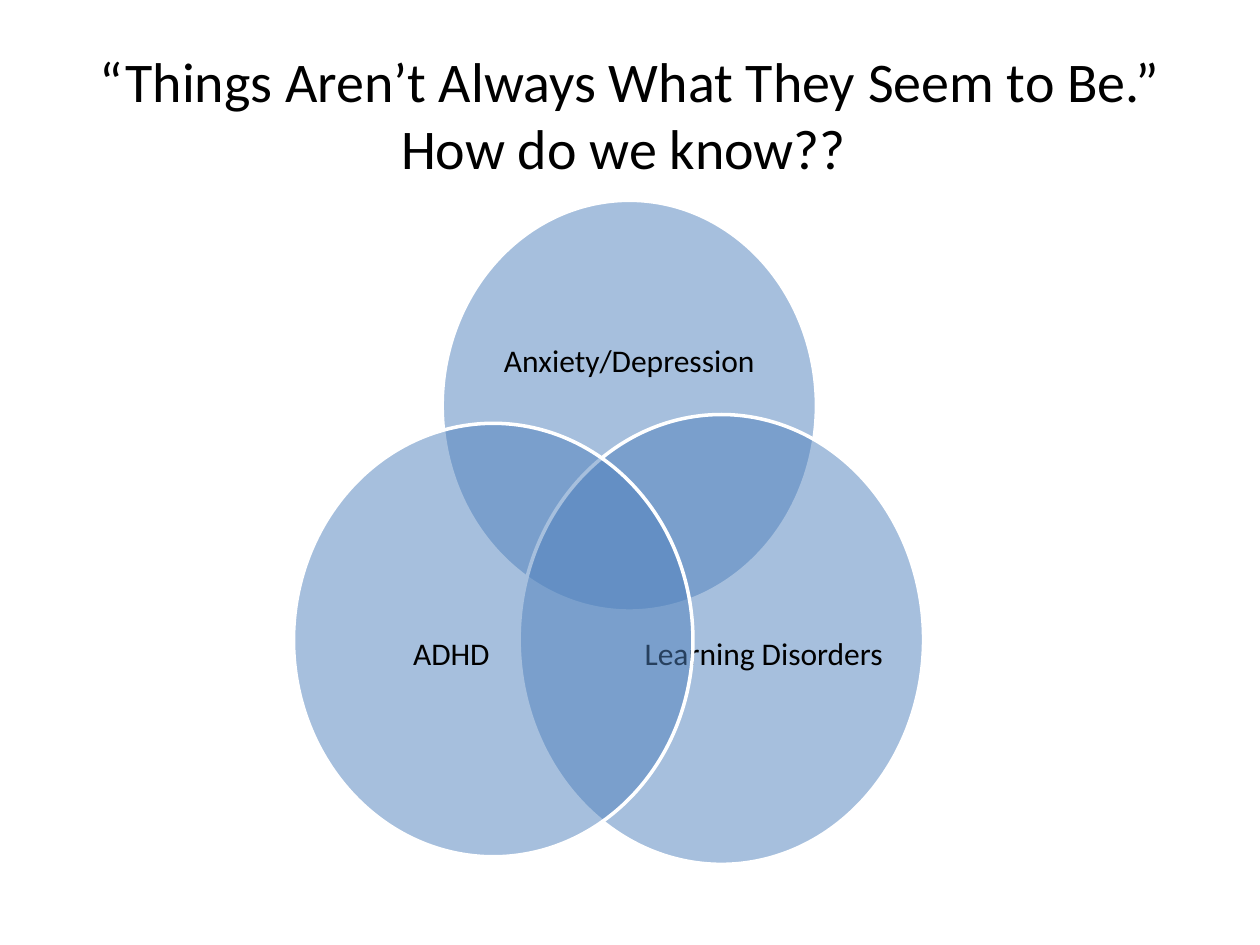
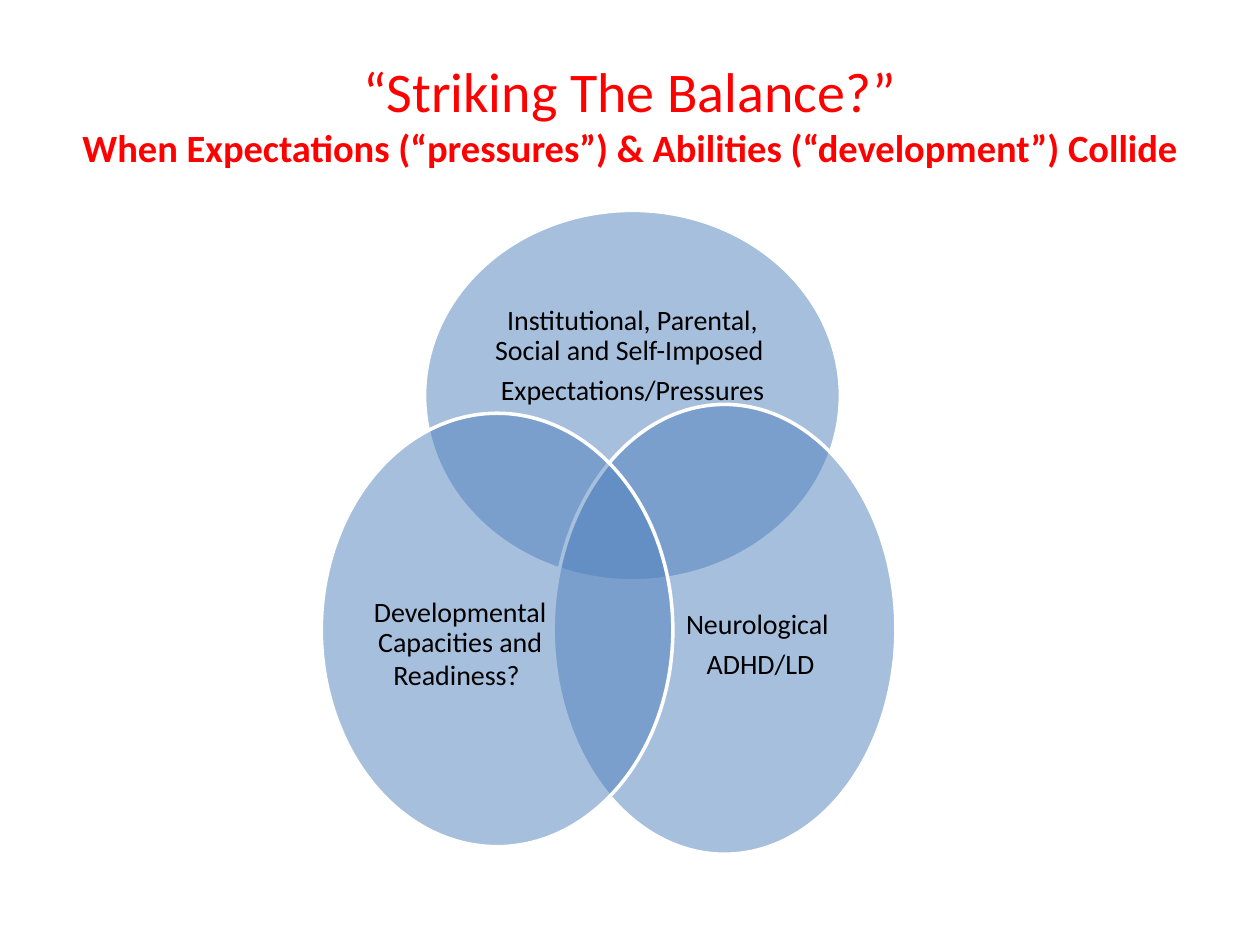
from lxml import etree
from pptx import Presentation
from pptx.dml.color import RGBColor
from pptx.enum.shapes import MSO_SHAPE
from pptx.enum.text import MSO_ANCHOR, MSO_AUTO_SIZE, PP_ALIGN
from pptx.oxml.ns import qn
from pptx.util import Inches, Pt

OVAL = MSO_SHAPE.OVAL
MIDDLE = MSO_ANCHOR.MIDDLE
NO_AUTOFIT = MSO_AUTO_SIZE.NONE
CENTER = PP_ALIGN.CENTER
TITLE_ONLY = 5

COLORS = {"circle": "4F81BD", "outline": "FFFFFF", "text": "000000", "alert": "FF0000"}
FONT = "Calibri"
COLUMNS, ROWS = 100, 75

# Label areas as shares of their circle: left, top, width, height
LABEL_AREAS = {
    "top": (0.13, 0.17, 0.74, 0.45),
    "right": (0.305, 0.26, 0.6, 0.55),
    "left": (0.095, 0.26, 0.6, 0.55),
}


class VennDeck:
    def __init__(self):
        self.presentation = Presentation()
        self.presentation.slide_width = Inches(10)
        self.presentation.slide_height = Inches(7.5)
        self.slide = None

    def place(self, area):
        """Turn left, top, width, height in grid columns and rows into lengths."""
        column = self.presentation.slide_width / COLUMNS
        row = self.presentation.slide_height / ROWS
        left, top, width, height = area
        return [round(length) for length in
                (left * column, top * row, width * column, height * row)]

    def add_run(self, paragraph, text, size, color="text", bold=False):
        run = paragraph.add_run()
        run.text = text
        run.font.name = FONT
        run.font.size = Pt(size)
        run.font.bold = bold
        run.font.color.rgb = RGBColor.from_string(COLORS[color])

    def add_slide(self, title_lines, color="text"):
        """Start a slide; each title line is a tuple of text, size and bold."""
        layout = self.presentation.slide_layouts[TITLE_ONLY]
        self.slide = self.presentation.slides.add_slide(layout)
        title = self.slide.shapes.title
        title.left, title.top, title.width, title.height = self.place((5, 3, 90, 12))
        frame = title.text_frame
        frame.word_wrap = True
        frame.auto_size = NO_AUTOFIT
        frame.vertical_anchor = MIDDLE
        paragraph = frame.paragraphs[0]
        paragraph.alignment = CENTER
        for index, (text, size, bold) in enumerate(title_lines):
            if index:
                paragraph.add_line_break()
            self.add_run(paragraph, text, size, color, bold)

    def add_circle(self, area):
        circle = self.slide.shapes.add_shape(OVAL, *self.place(area))
        circle.shadow.inherit = False
        circle.fill.solid()
        circle.fill.fore_color.rgb = RGBColor.from_string(COLORS["circle"])
        fill_color = circle._element.spPr.find(qn("a:solidFill")).find(qn("a:srgbClr"))
        etree.SubElement(fill_color, qn("a:alpha")).set("val", "50000")
        circle.line.color.rgb = RGBColor.from_string(COLORS["outline"])
        circle.line.width = Pt(2)

    def add_label(self, area, paragraphs):
        """Add centred text; each paragraph is a list of (text, size) runs."""
        frame = self.slide.shapes.add_textbox(*self.place(area)).text_frame
        frame.word_wrap = True
        frame.auto_size = NO_AUTOFIT
        frame.vertical_anchor = MIDDLE
        frame.margin_left = frame.margin_right = 0
        frame.margin_top = frame.margin_bottom = 0
        for index, runs in enumerate(paragraphs):
            paragraph = frame.add_paragraph() if index else frame.paragraphs[0]
            paragraph.alignment = CENTER
            paragraph.line_spacing = 0.9
            paragraph.space_after = Pt(0.35 * runs[0][1])
            for text, size in runs:
                self.add_run(paragraph, text, size)

    def add_venn(self, circles):
        """Draw circles back to front, each followed by its label."""
        for position, area, paragraphs in circles:
            left, top, width, height = area
            across, down, share_x, share_y = LABEL_AREAS[position]
            self.add_circle(area)
            self.add_label((left + across * width, top + down * height,
                            share_x * width, share_y * height), paragraphs)


def main():
    deck = VennDeck()

    deck.add_slide([("“Things Aren’t Always What They Seem to Be.” How do we know?? ", 32, False)])
    deck.add_venn([
        ("top", (35.1, 15.9, 29.7, 32.6), [[("Anxiety/Depression", 18)]]),
        ("right", (41.2, 32.9, 32.1, 35.7), [[("Learning Disorders", 18)]]),
        ("left", (23.3, 33.6, 31.7, 34.4), [[("ADHD", 18)]]),
    ])

    deck.add_slide([
        ("“Striking The Balance?”", 32, False),
        ("When Expectations (“pressures”) & Abilities (“development”) Collide", 22, True),
    ], "alert")
    deck.add_venn([
        ("top", (33.7, 16.7, 33, 29.4), [
            [("Institutional, Parental, Social and Self-Imposed ", 16)],
            [("Expectations/Pressures", 16)],
        ]),
        ("right", (43.9, 32.1, 27.2, 35.7), [[("Neurological ", 16)], [("ADHD/LD", 16)]]),
        ("left", (25.5, 32.8, 27.9, 34.4), [
            [("Developmental Capacities and Readiness?", 16), (" ", 18)],
        ]),
    ])

    deck.presentation.save("out.pptx")


if __name__ == "__main__":
    main()
